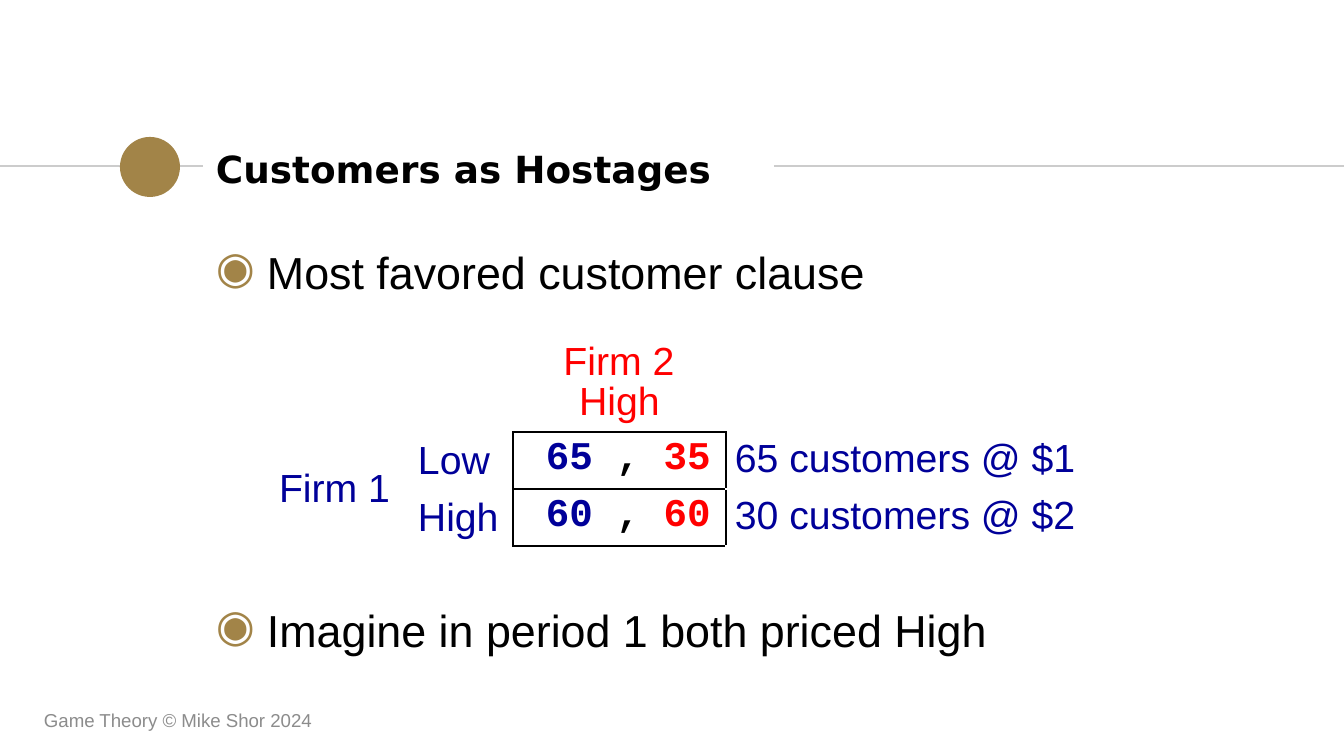
from lxml import etree
from pptx import Presentation
from pptx.dml.color import RGBColor
from pptx.enum.shapes import MSO_CONNECTOR, MSO_SHAPE
from pptx.enum.text import MSO_ANCHOR, PP_ALIGN
from pptx.oxml.ns import qn
from pptx.util import Pt

STRAIGHT = MSO_CONNECTOR.STRAIGHT
OVAL = MSO_SHAPE.OVAL
TOP, MIDDLE = MSO_ANCHOR.TOP, MSO_ANCHOR.MIDDLE
LEFT, CENTER = PP_ALIGN.LEFT, PP_ALIGN.CENTER

BLACK = RGBColor(0x00, 0x00, 0x00)
GOLD = RGBColor(0xA2, 0x84, 0x48)
RULE_GRAY = RGBColor(0xCC, 0xCC, 0xCC)
FOOTER_GRAY = RGBColor(0x8C, 0x8C, 0x8C)
BLUE = RGBColor(0x00, 0x00, 0x99)
RED = RGBColor(0xFF, 0x00, 0x00)

PX = 914400 / 134.4
TITLE = {"name": "DejaVu Sans", "size": Pt(20), "bold": True}
BODY = {"name": "Arial", "size": Pt(24), "bold": False}
FOOTER = {"name": "Arial", "size": Pt(10), "bold": False}
LABEL = {"name": "Arial", "size": Pt(21), "bold": False}
PAYOFF = {"name": "Courier New", "size": Pt(21), "bold": True}


def add_runs(paragraph, runs, font_format):
    for text, color in runs:
        run = paragraph.add_run()
        run.text = text
        run.font.color.rgb = color
        for name, value in font_format.items():
            setattr(run.font, name, value)


def add_text(box, text, color, font_format, margins, anchor, alignment):
    shape = slide.shapes.add_textbox(*[round(value * PX) for value in box])
    frame = shape.text_frame
    horizontal, vertical = [round(value * PX) for value in margins]
    frame_format = {
        "word_wrap": True, "vertical_anchor": anchor,
        "margin_left": horizontal, "margin_right": horizontal,
        "margin_top": vertical, "margin_bottom": vertical,
    }
    for name, value in frame_format.items():
        setattr(frame, name, value)
    paragraph = frame.paragraphs[0]
    paragraph.alignment = alignment
    add_runs(paragraph, [(text, color)], font_format)
    return paragraph


presentation = Presentation()
presentation.slide_width = round(1344 * PX)
presentation.slide_height = round(756 * PX)
slide = presentation.slides.add_slide(presentation.slide_layouts[6])

for start, end in [(0, 203), (774, 1344)]:
    rule = slide.shapes.add_connector(
        STRAIGHT, *[round(value * PX) for value in (start, 166, end, 166)])
    rule.line.color.rgb = RULE_GRAY
    rule.line.width = Pt(0.75)
    etree.SubElement(rule.element.spPr, qn("a:effectLst"))

circle = slide.shapes.add_shape(OVAL, *[round(value * PX) for value in (120, 137, 60, 60)])
circle.shadow.inherit = False
circle.fill.solid()
circle.fill.fore_color.rgb = GOLD
circle.line.fill.background()

add_text((203, 136, 570, 65), "Customers as Hostages", BLACK, TITLE, (13, 13), MIDDLE, LEFT)

for top, text in [(238, "Most favored customer clause"),
                  (596, "Imagine in period 1 both priced High")]:
    paragraph = add_text((203, top, 1001, 76), text, BLACK, BODY, (13, 13), TOP, LEFT)
    paragraph.line_spacing = 0.9
    properties = paragraph._p.get_or_add_pPr()
    properties.set("marL", str(round(51 * PX)))
    properties.set("indent", str(round(-51 * PX)))
    bullet_color = etree.SubElement(properties, qn("a:buClr"))
    etree.SubElement(bullet_color, qn("a:srgbClr"), val=str(GOLD))
    etree.SubElement(properties, qn("a:buChar"), char="◉")

add_text((31, 700, 454, 40), "Game Theory © Mike Shor 2024", FOOTER_GRAY, FOOTER,
         (13, 7), MIDDLE, LEFT)

column_widths = [24, 115, 104, 213, 375]
row_height = 57
table_box = (270, 375, sum(column_widths), 3 * row_height)
table = slide.shapes.add_table(3, 5, *[round(value * PX) for value in table_box]).table
table.first_row = False
table.horz_banding = False
for column, width in zip(table.columns, column_widths):
    column.width = round(width * PX)
for row in table.rows:
    row.height = round(row_height * PX)
for cell in table.iter_cells():
    cell.fill.background()
    cell.margin_left = cell.margin_right = round(9 * PX)
    cell.margin_top = cell.margin_bottom = round(5 * PX)
table.cell(0, 1).merge(table.cell(0, 2))
table.cell(1, 0).merge(table.cell(2, 1))

entries = [
    (0, 3, [("High", RED)], LABEL, TOP, CENTER),
    (1, 0, [("Firm 1", BLUE)], LABEL, MIDDLE, LEFT),
]
strategies = [("Low", "65", "35", "65 customers @ $1"),
              ("High", "60", "60", "30 customers @ $2")]
for row, (strategy, own, rival, outcome) in enumerate(strategies, 1):
    payoffs = [(own, BLUE), (" , ", BLACK), (rival, RED)]
    entries += [
        (row, 2, [(strategy, BLUE)], LABEL, MIDDLE, LEFT),
        (row, 3, payoffs, PAYOFF, TOP, LEFT),
        (row, 4, [(outcome, BLUE)], LABEL, TOP, LEFT),
    ]
    table.cell(row, 3).margin_left = round(33 * PX)

for row, column, runs, font_format, anchor, alignment in entries:
    cell = table.cell(row, column)
    cell.vertical_anchor = anchor
    paragraph = cell.text_frame.paragraphs[0]
    paragraph.alignment = alignment
    add_runs(paragraph, runs, font_format)

borders = {(0, 3): ["lnB"]}
for row in (1, 2):
    borders[row, 2] = ["lnR"]
    borders[row, 3] = ["lnL", "lnR", "lnT", "lnB"]
    borders[row, 4] = ["lnL"]
for (row, column), sides in borders.items():
    properties = table.cell(row, column)._tc.get_or_add_tcPr()
    for position, side in enumerate(sides):
        border = etree.Element(qn(f"a:{side}"), w=str(Pt(1)))
        fill = etree.SubElement(border, qn("a:solidFill"))
        etree.SubElement(fill, qn("a:srgbClr"), val=str(BLACK))
        properties.insert(position, border)

add_text((509, 329, 220, 60), "Firm 2", RED, LABEL, (13, 7), TOP, CENTER)

presentation.save("out.pptx")
